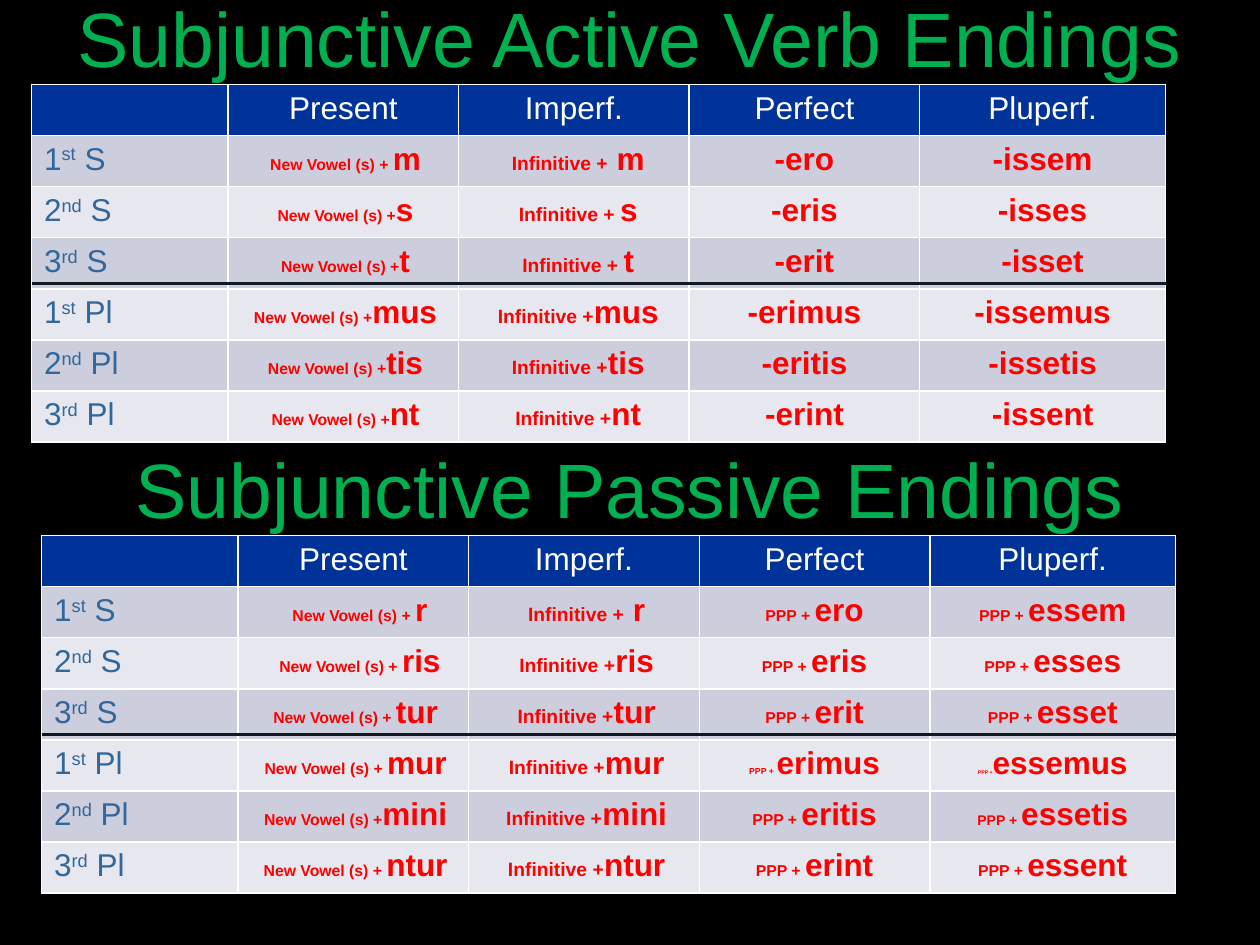
from pptx import Presentation
from pptx.dml.color import RGBColor
from pptx.enum.shapes import MSO_CONNECTOR
from pptx.enum.text import MSO_ANCHOR, PP_ALIGN
from pptx.oxml.ns import qn
from pptx.util import Inches, Pt

HUES = {
    "back": "000000", "title": "00B050", "head": "003399", "white": "FFFFFF",
    "odd": "CCCEDE", "even": "E7E8EF", "label": "336699", "ending": "FF0000",
    "rule": "10191F",
}
WIDTHS = [1.56, 1.83, 1.83, 1.83, 1.95]
HEIGHT = 2.84
HEADS = ["", "Present", "Imperf.", "Perfect", "Pluperf."]
LABELS = [(n, mark, form) for form in (" S", " Pl")
          for n, mark in (("1", "st"), ("2", "nd"), ("3", "rd"))]
LEADS = [9, 11, 9, 9]  # point size of the small lead-in, by tense

# "|" parts the runs: the small lead-in stands just before the ending
ACTIVE = [
    [" New Vowel (s) + |m", " |Infinitive +| m", "-ero", "-issem"],
    [" New Vowel (s) +|s", " |Infinitive + |s", "-eris", "-isses"],
    [" New Vowel (s) +|t", " |Infinitive + |t", "-erit", "-isset"],
    [" New Vowel (s) +|mus", " |Infinitive +|mus", "-erimus", "-issemus"],
    [" New Vowel (s) +|tis", " |Infinitive +|tis", "-eritis", "-issetis"],
    [" New Vowel (s) +|nt", " |Infinitive +|nt", "-erint", "-issent"],
]
PASSIVE = [
    [" | New Vowel (s) + |r", " Infinitive +| r", "PPP + |ero", "PPP + |essem"],
    [" | New Vowel (s) + |ris", " Infinitive +|ris", "PPP + |eris", "PPP + |esses"],
    [" New Vowel (s) + |tur", " Infinitive +|tur", "PPP + |erit", "PPP + |esset"],
    [" New Vowel (s) + |mur", " Infinitive +|mur", "PPP + |erimus", "PPP +|essemus"],
    [" New Vowel (s) +|mini", " Infinitive +|mini", "PPP + |eritis", "PPP + |essetis"],
    [" New Vowel (s) + |ntur", " Infinitive +|ntur", "PPP + |erint", "PPP + |essent"],
]
SMALL = {(3, 2): 5, (3, 3): 3, (4, 3): 8}  # passive lead-ins that were shrunk


def tint(hue):
    return RGBColor.from_string(HUES[hue])


def add_text(para, text, size=18, hue="white", bold=False, base=0):
    """Add one run; base is the superscript rise in percent."""
    run = para.add_run()
    run.text = text
    font = run.font
    font.name, font.size, font.bold = "Arial", Pt(size), bold
    font.color.rgb = tint(hue)
    if base:
        run._r.get_or_add_rPr().set("baseline", str(base * 1000))


def add_title(slide, text, left, top, width):
    box = slide.shapes.add_textbox(
        Inches(left), Inches(top), Inches(width), Inches(0.58))
    frame = box.text_frame
    frame.word_wrap = True
    frame.vertical_anchor = MSO_ANCHOR.MIDDLE
    para = frame.paragraphs[0]
    para.alignment = PP_ALIGN.CENTER
    add_text(para, text, size=44, hue="title")


def fill_cell(cell, hue, align=PP_ALIGN.CENTER):
    """Paint a cell and return its paragraph."""
    cell.fill.solid()
    cell.fill.fore_color.rgb = tint(hue)
    para = cell.text_frame.paragraphs[0]
    para.alignment = align
    return para


def add_ending(para, text, lead):
    parts = text.split("|")
    for i, part in enumerate(parts):
        size = lead if i == len(parts) - 2 else 18
        add_text(para, part, size=size, hue="ending", bold=True)


def add_grid(slide, rows, left, top, small):
    count = len(rows) + 1
    grid = slide.shapes.add_table(
        count, len(WIDTHS), Inches(left), Inches(top),
        Inches(sum(WIDTHS)), Inches(HEIGHT)).table
    for col, width in zip(grid.columns, WIDTHS):
        col.width = Inches(width)
    for row in grid.rows:
        row.height = Inches(HEIGHT / count)
    for c, head in enumerate(HEADS):
        para = fill_cell(grid.cell(0, c), "head")
        if head:
            add_text(para, head)
    for r, (label, row) in enumerate(zip(LABELS, rows)):
        hue = "even" if r % 2 else "odd"
        para = fill_cell(grid.cell(r + 1, 0), hue, PP_ALIGN.LEFT)
        for part, base in zip(label, (0, 30, 0)):
            add_text(para, part, hue="label", base=base)
        for c, text in enumerate(row):
            para = fill_cell(grid.cell(r + 1, c + 1), hue)
            add_ending(para, text, small.get((r, c), LEADS[c]))


def add_rule(slide, left, top):
    line = slide.shapes.add_connector(
        MSO_CONNECTOR.STRAIGHT, Inches(left), Inches(top),
        Inches(left + sum(WIDTHS)), Inches(top))
    line.line.color.rgb = tint("rule")
    line.line.width = Pt(1.5)
    props = line._element.spPr
    props.append(props.makeelement(qn("a:effectLst"), {}))


def main():
    deck = Presentation()
    deck.slide_width, deck.slide_height = Inches(10), Inches(7.5)
    slide = deck.slides.add_slide(deck.slide_layouts[6])
    slide.background.fill.solid()
    slide.background.fill.fore_color.rgb = tint("back")
    add_title(slide, "Subjunctive Active Verb Endings", 0, 0, 10)
    add_grid(slide, ACTIVE, 0.25, 0.67, {})
    add_title(slide, "Subjunctive Passive Endings", 0.5, 3.58, 9)
    add_grid(slide, PASSIVE, 0.33, 4.25, SMALL)
    add_rule(slide, 0.25, 2.25)
    add_rule(slide, 0.33, 5.83)
    deck.save("out.pptx")


if __name__ == "__main__":
    main()
